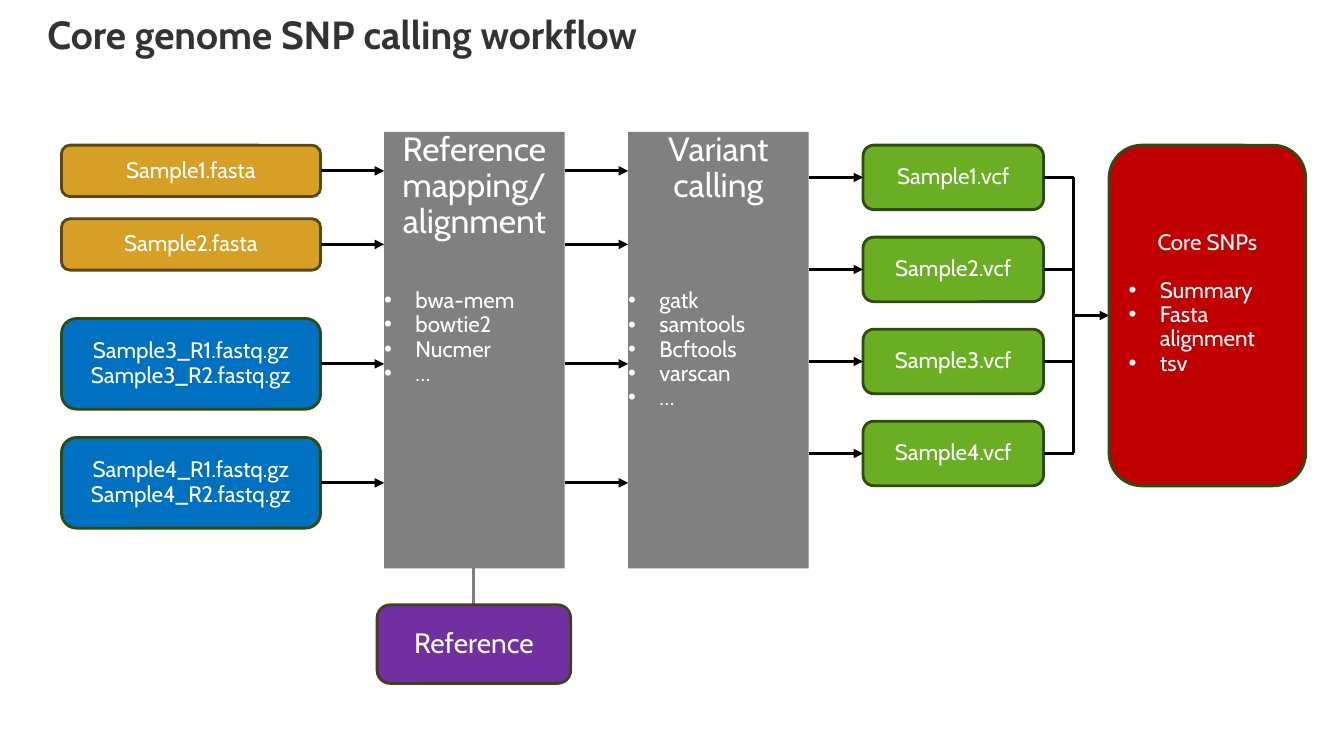
from lxml.etree import SubElement
from pptx import Presentation
from pptx.dml.color import RGBColor
from pptx.enum.shapes import MSO_CONNECTOR as Connector, MSO_SHAPE as Shape
from pptx.enum.text import MSO_ANCHOR as Anchor, PP_ALIGN as Align
from pptx.oxml.ns import qn
from pptx.util import Inches, Pt

INDENT = 0.31
BLACK, WHITE, GREY = "000000", "FFFFFF", "808080"
AMBER, BLUE, GREEN = "D6A026", "0070C0", "69AE23"
DARK_AMBER, DARK_GREEN = "5E4611", "2E4C0F"


def color(value):
    return RGBColor.from_string(value)


def add_text(frame, text, size=16, ink=WHITE, bold=False, align=Align.CENTER,
             bullet=False, before=0):
    for number, line in enumerate(text.split("\n")):
        first = frame.paragraphs[0]
        paragraph = frame.add_paragraph() if first.runs else first
        paragraph.alignment = align
        paragraph.line_spacing = 0.9
        paragraph.space_before = Pt(before if number == 0 else 0)
        if bullet:
            properties = paragraph._p.get_or_add_pPr()
            properties.set("marL", str(Inches(INDENT)))
            properties.set("indent", str(-Inches(INDENT)))
            SubElement(properties, qn("a:buFont"), typeface="Arial")
            SubElement(properties, qn("a:buChar"), char="•")
        run = paragraph.add_run()
        run.text = line
        run.font.name = "Cabin"
        run.font.size = Pt(size)
        run.font.bold = bold
        run.font.color.rgb = color(ink)


def set_margins(frame, margin):
    frame.margin_left = frame.margin_right = Inches(margin)
    frame.margin_top = frame.margin_bottom = Inches(margin)


def add_block(slide, box, fill, outline=None):
    kind = Shape.ROUNDED_RECTANGLE if outline else Shape.RECTANGLE
    block = slide.shapes.add_shape(kind, *map(Inches, box))
    block.shadow.inherit = False
    block.fill.solid()
    block.fill.fore_color.rgb = color(fill)
    if outline:
        block.line.color.rgb = color(outline)
        block.line.width = Pt(2)
    else:
        block.line.fill.background()
    frame = block.text_frame
    frame.word_wrap = True
    frame.vertical_anchor = Anchor.MIDDLE if outline else Anchor.TOP
    if not outline:
        set_margins(frame, 0)
    return frame


def add_step(slide, left, heading, tools, gap):
    frame = add_block(slide, (left, 1.31, 1.79, 4.33), GREY)
    add_text(frame, heading, size=24)
    add_text(frame, tools, align=Align.LEFT, bullet=True, before=gap)


def add_line(slide, start, end, ink=BLACK, arrow=False):
    line = slide.shapes.add_connector(
        Connector.STRAIGHT, *map(Inches, (*start, *end)))
    line.line.color.rgb = color(ink)
    line.line.width = Pt(2.25)
    if arrow:
        SubElement(line.line._get_or_add_ln(), qn("a:tailEnd"), type="triangle")
    SubElement(line._element.spPr, qn("a:effectLst"))


def add_title(slide, text):
    title = slide.shapes.add_textbox(*map(Inches, (0.47, 0.16, 11.28, 0.9)))
    frame = title.text_frame
    frame.word_wrap = True
    set_margins(frame, 0)
    add_text(frame, text, size=28, ink="333333", bold=True, align=Align.LEFT)


def add_inputs(slide):
    inputs = [
        ("Sample1.fasta", 1.44, 0.51, AMBER, DARK_AMBER),
        ("Sample2.fasta", 2.17, 0.51, AMBER, DARK_AMBER),
        ("Sample3_R1.fastq.gz\nSample3_R2.fastq.gz", 3.16, 0.9, BLUE, DARK_GREEN),
        ("Sample4_R1.fastq.gz\nSample4_R2.fastq.gz", 4.34, 0.9, BLUE, DARK_GREEN),
    ]
    for files, top, height, fill, outline in inputs:
        add_text(add_block(slide, (0.61, top, 2.57, height), fill, outline), files)
        middle = top + height / 2
        for left, right in ((3.18, 3.81), (5.6, 6.23)):
            add_line(slide, (left, middle), (right, middle), arrow=True)


def add_calls(slide):
    top, pitch, height, bus = 1.44, 0.913, 0.64, 10.65
    middles = [top + pitch * row + height / 2 for row in range(4)]
    for number, middle in enumerate(middles, 1):
        box = (8.56, middle - height / 2, 1.79, height)
        add_text(add_block(slide, box, GREEN, DARK_GREEN), f"Sample{number}.vcf")
        add_line(slide, (8.02, middle), (8.56, middle), arrow=True)
        add_line(slide, (10.35, middle), (bus, middle))
    add_line(slide, (bus, middles[0]), (bus, middles[-1]))
    add_line(slide, (bus, 3.13), (11, 3.13), arrow=True)


def add_core_snps(slide):
    frame = add_block(slide, (11, 1.44, 1.95, 3.38), "C00000", DARK_GREEN)
    frame.margin_bottom = Inches(0.29)
    add_text(frame, "Core SNPs")
    add_text(frame, "Summary\nFasta alignment\ntsv", align=Align.LEFT,
             bullet=True, before=17.4)


def main():
    deck = Presentation()
    deck.slide_width, deck.slide_height = Inches(13.33), Inches(7.5)
    slide = deck.slides.add_slide(deck.slide_layouts[6])
    add_title(slide, "Core genome SNP calling workflow")
    add_step(slide, 3.81, "Reference\nmapping/\nalignment",
             "bwa-mem\nbowtie2\nNucmer\n…", gap=34.7)
    add_step(slide, 6.23, "Variant calling",
             "gatk\nsamtools\nBcftools\nvarscan\n…", gap=60.7)
    add_inputs(slide)
    add_calls(slide)
    add_core_snps(slide)
    add_line(slide, (4.7, 5.64), (4.7, 6), ink=GREY)
    reference = add_block(slide, (3.74, 6, 1.92, 0.78), "7030A0", "453D26")
    add_text(reference, "Reference", size=20)
    deck.save("out.pptx")


if __name__ == "__main__":
    main()
